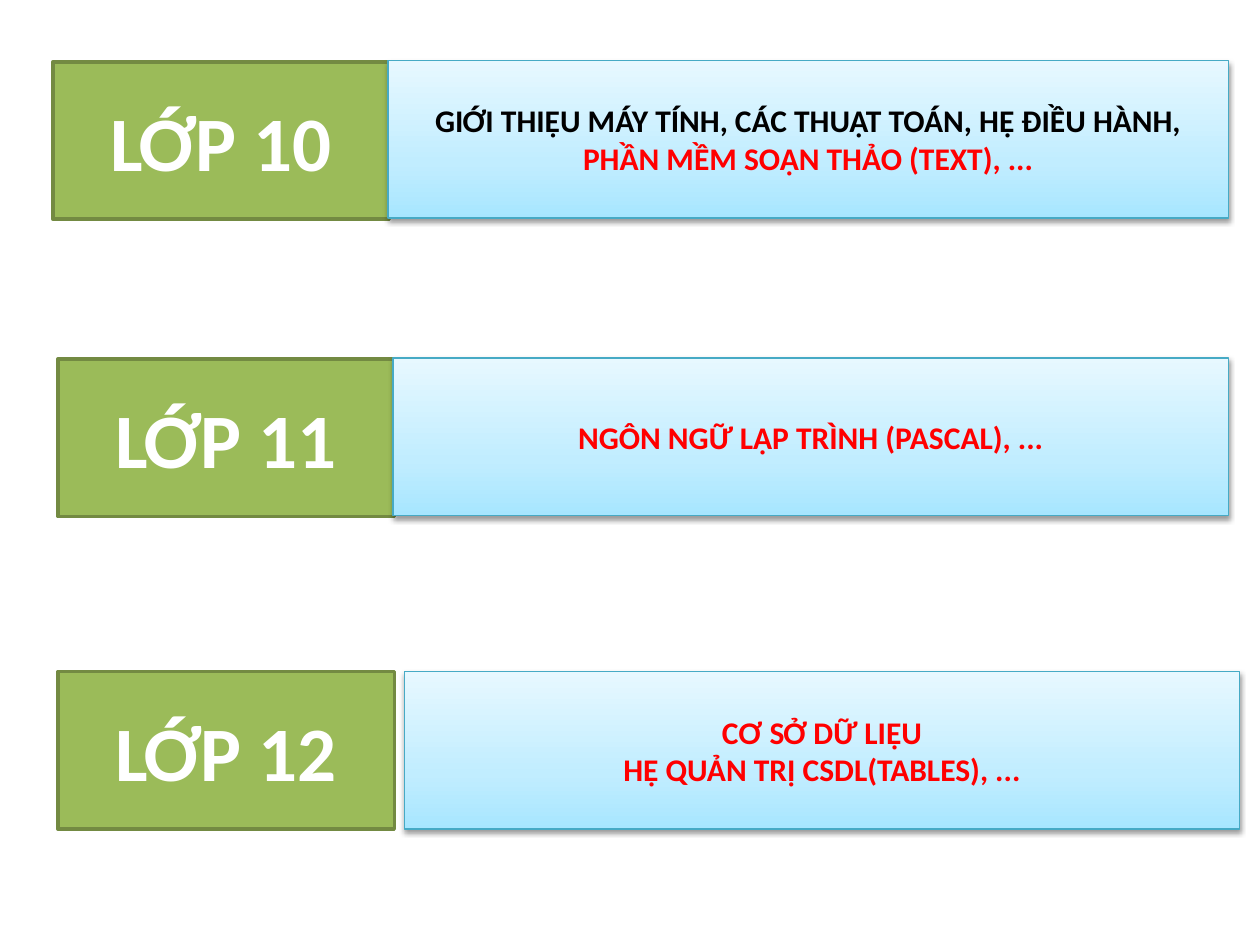
import copy

import pptx
import pptx.dml.color
import pptx.enum.shapes
import pptx.enum.text
import pptx.oxml
import pptx.oxml.ns
import pptx.util

COLORS = {"green": "9BBB59", "olive": "738A42", "teal": "46AAC5",
          "white": "FFFFFF", "black": "000000", "red": "FF0000",
          "sky": "A7E6FF", "pale": "C1EDFF", "ice": "E7F8FF"}
SKY_STOPS = [(0, "sky"), (0.35, "pale"), (1, "ice")]
SHADOW = (
    '<a:outerShdw %s blurRad="39370" dist="20320" dir="5400000" rotWithShape="0">'
    '<a:srgbClr val="%s"><a:alpha val="38000"/></a:srgbClr></a:outerShdw>'
    % (pptx.oxml.ns.nsdecls("a"), COLORS["black"]))
ROW_HEIGHT, LABEL_WIDTH = 1.25, 2.67


def rgb(name):
    return pptx.dml.color.RGBColor.from_string(COLORS[name])


def add_box(left, top, width, line, line_width, size, paragraphs):
    """Add an outlined rectangle; paragraphs are lists of (text, colour) runs."""
    s = prs.slides[0].shapes.add_shape(
        pptx.enum.shapes.MSO_SHAPE.RECTANGLE,
        *(pptx.util.Inches(v) for v in (left, top, width, ROW_HEIGHT)))
    s.shadow.inherit = False
    s.line.color.rgb = rgb(line)
    s.line.width = pptx.util.Pt(line_width)
    tf = s.text_frame
    tf.word_wrap = True
    tf.vertical_anchor = pptx.enum.text.MSO_ANCHOR.MIDDLE
    for i, runs in enumerate(paragraphs):
        p = tf.add_paragraph() if i else tf.paragraphs[0]
        p.alignment = pptx.enum.text.PP_ALIGN.CENTER
        for text, color in runs:
            r = p.add_run()
            r.text = text
            font = {"name": "Calibri", "size": pptx.util.Pt(size), "bold": True}
            for key, value in font.items():
                setattr(r.font, key, value)
            r.font.color.rgb = rgb(color)
    return s


prs = pptx.Presentation()
prs.slide_width, prs.slide_height = pptx.util.Inches(10), pptx.util.Inches(7.5)
prs.slides.add_slide(prs.slide_layouts[6])

# label, label left and top, topic left, top and width, topic paragraphs
grades = [
    ("LỚP 10", 0.42, 0.49, 3.08, 0.48, 6.67,
     [[("GIỚI THIỆU MÁY TÍNH, CÁC THUẬT TOÁN, HỆ ĐIỀU HÀNH, ", "black"),
       ("PHẦN MỀM SOẠN THẢO (TEXT), ...", "red")]]),
    ("LỚP 11", 0.46, 2.85, 3.12, 2.84, 6.63,
     [[("NGÔN NGỮ LẬP TRÌNH (PASCAL), ...", "red")]]),
    ("LỚP 12", 0.46, 5.33, 3.21, 5.33, 6.63,
     [[("CƠ SỞ DỮ LIỆU", "red")],
      [("HỆ QUẢN TRỊ CSDL(TABLES), ...", "red")]]),
]

for label, left, top, topic_left, topic_top, topic_width, topics in grades:
    s = add_box(left, top, LABEL_WIDTH, "olive", 2, 44, [[(label, "white")]])
    s.fill.solid()
    s.fill.fore_color.rgb = rgb("green")

    s = add_box(topic_left, topic_top, topic_width, "teal", 0.75, 18, topics)
    s.fill.gradient()
    s.fill.gradient_angle = 90
    stop_list = s.element.spPr.find(".//" + pptx.oxml.ns.qn("a:gsLst"))
    stop_list.append(copy.deepcopy(stop_list[-1]))
    for stop, (position, color) in zip(s.fill.gradient_stops, SKY_STOPS):
        stop.position = position
        stop.color.rgb = rgb(color)
    effects = s.element.spPr.find(pptx.oxml.ns.qn("a:effectLst"))
    effects.append(pptx.oxml.parse_xml(SHADOW))

prs.save("out.pptx")
